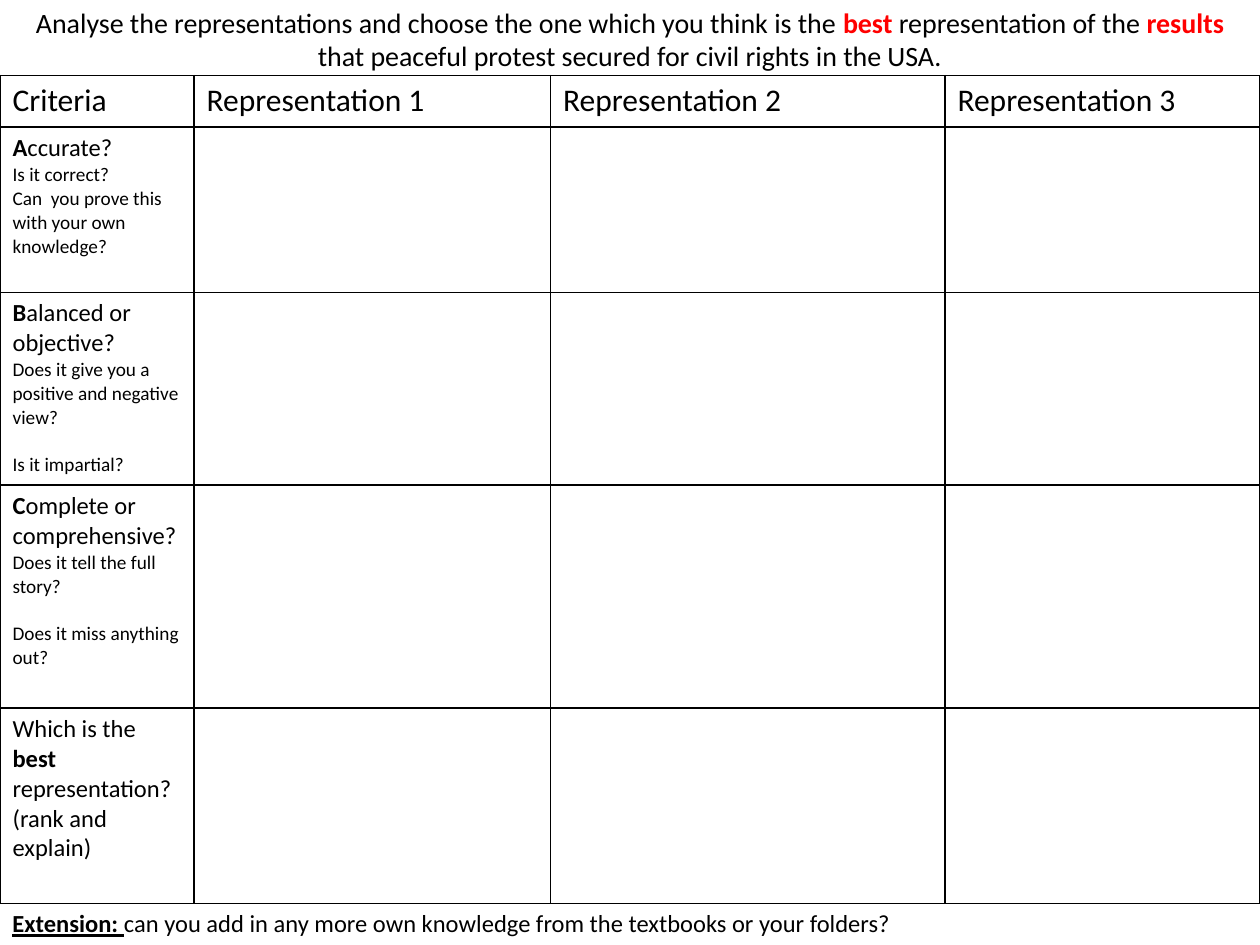
import pptx
import pptx.dml.color
import pptx.enum.text
import pptx.oxml
import pptx.oxml.ns
import pptx.util

BLACK, RED, WHITE = "000000", "FF0000", "FFFFFF"
COLS, ROWS = 100, 75


def rgb(code):
    return pptx.dml.color.RGBColor.from_string(code)


class Page:
    """Holds the style and the current slide, laid out on a COLS by ROWS grid."""

    face = "Calibri"

    def __init__(self, deck):
        self.slide = deck.slides.add_slide(deck.slide_layouts[5])
        self.unit_x = deck.slide_width / COLS
        self.unit_y = deck.slide_height / ROWS

    def box(self, x, y, w, h):
        """Turn grid columns and rows into slide lengths."""
        return (round(x * self.unit_x), round(y * self.unit_y),
                round(w * self.unit_x), round(h * self.unit_y))

    def fill(self, frame, lines):
        """Fill a frame with lines of (size, gap before, runs of (text, style))."""
        frame.word_wrap = True
        for i, (size, gap, runs) in enumerate(lines):
            para = frame.add_paragraph() if i else frame.paragraphs[0]
            para.space_before = pptx.util.Pt(gap)
            para.font.size = pptx.util.Pt(size)
            para.font.name = self.face
            para.font.color.rgb = rgb(BLACK)
            for text, style in runs:
                run = para.add_run()
                run.text = text
                if style:
                    run.font.bold = True
                if style == "red":
                    run.font.color.rgb = rgb(RED)
                if style == "under":
                    run.font.underline = True

    def title(self, place, lines):
        shape = self.slide.shapes.title
        shape.left, shape.top, shape.width, shape.height = self.box(*place)
        frame = shape.text_frame
        frame.auto_size = pptx.enum.text.MSO_AUTO_SIZE.NONE
        frame.vertical_anchor = pptx.enum.text.MSO_ANCHOR.TOP
        self.fill(frame, lines)
        frame.paragraphs[0].alignment = pptx.enum.text.PP_ALIGN.CENTER

    def text(self, place, lines):
        shape = self.slide.shapes.add_textbox(*self.box(*place))
        self.fill(shape.text_frame, lines)

    def border(self, cell):
        props = cell._tc.get_or_add_tcPr()
        for side in ("lnL", "lnR", "lnT", "lnB"):
            props.append(pptx.oxml.parse_xml(
                f'<a:{side} {pptx.oxml.ns.nsdecls("a")} w="12700"><a:solidFill>'
                f'<a:srgbClr val="{BLACK}"/></a:solidFill></a:{side}>'))

    def table(self, x, y, widths, heights, cells):
        """Draw a ruled table; cells maps (row, column) to lines."""
        place = self.box(x, y, sum(widths), sum(heights))
        table = self.slide.shapes.add_table(len(heights), len(widths), *place).table
        table.first_row = table.horz_banding = False
        for col, width in zip(table.columns, widths):
            col.width = round(width * self.unit_x)
        for row, height in zip(table.rows, heights):
            row.height = round(height * self.unit_y)
        for r in range(len(heights)):
            for c in range(len(widths)):
                cell = table.cell(r, c)
                self.border(cell)
                cell.fill.solid()
                cell.fill.fore_color.rgb = rgb(WHITE)
                self.fill(cell.text_frame, cells.get((r, c), []))


def test(first, rest, *hints):
    """A criterion with a bold initial, then hints of (gap before, text)."""
    return [(14, 0, [(first, "bold"), (rest, "")])] + [
        (11, gap, [(hint, "")]) for gap, hint in hints]


def main():
    deck = pptx.Presentation()
    deck.slide_width = pptx.util.Inches(10)
    deck.slide_height = pptx.util.Inches(7.5)
    page = Page(deck)

    heads = ["Criteria"] + [f"Representation {n}" for n in (1, 2, 3)]
    cells = {(0, c): [(18, 0, [(head, "")])] for c, head in enumerate(heads)}
    gap = 13.4
    tests = [
        test("A", "ccurate?", (0, "Is it correct?"),
             (0, "Can  you prove this with your own knowledge?")),
        test("B", "alanced or objective?",
             (0, "Does it give you a positive and negative view?"),
             (gap, "Is it impartial?")),
        test("C", "omplete or comprehensive?",
             (0, "Does it tell the full story?"),
             (gap, "Does it miss anything out?")),
        [(14, 0, [("Which is the ", ""), ("best ", "bold"), ("representation?", "")]),
         (14, 0, [("(rank and explain)", "")])],
    ]
    cells.update({(r, 0): lines for r, lines in enumerate(tests, 1)})
    page.table(0, 6, [15.4, 28.3, 31.3, 25], [4.1, 13.1, 15.3, 17.7, 15.5], cells)

    page.title((0, -0.1, COLS, 11.8), [(16, 0, [
        ("Analyse the representations and choose the one which you think is the ", ""),
        ("best", "red"), (" representation of the ", ""), ("results", "red"),
        (" that peaceful protest secured for civil rights in the USA.", "")])])
    page.text((0, 71.6, COLS, 3.4), [(14, 0, [
        ("Extension: ", "under"),
        ("can you add in any more own knowledge from the textbooks or your folders?", "")])])

    deck.save("out.pptx")


if __name__ == "__main__":
    main()
